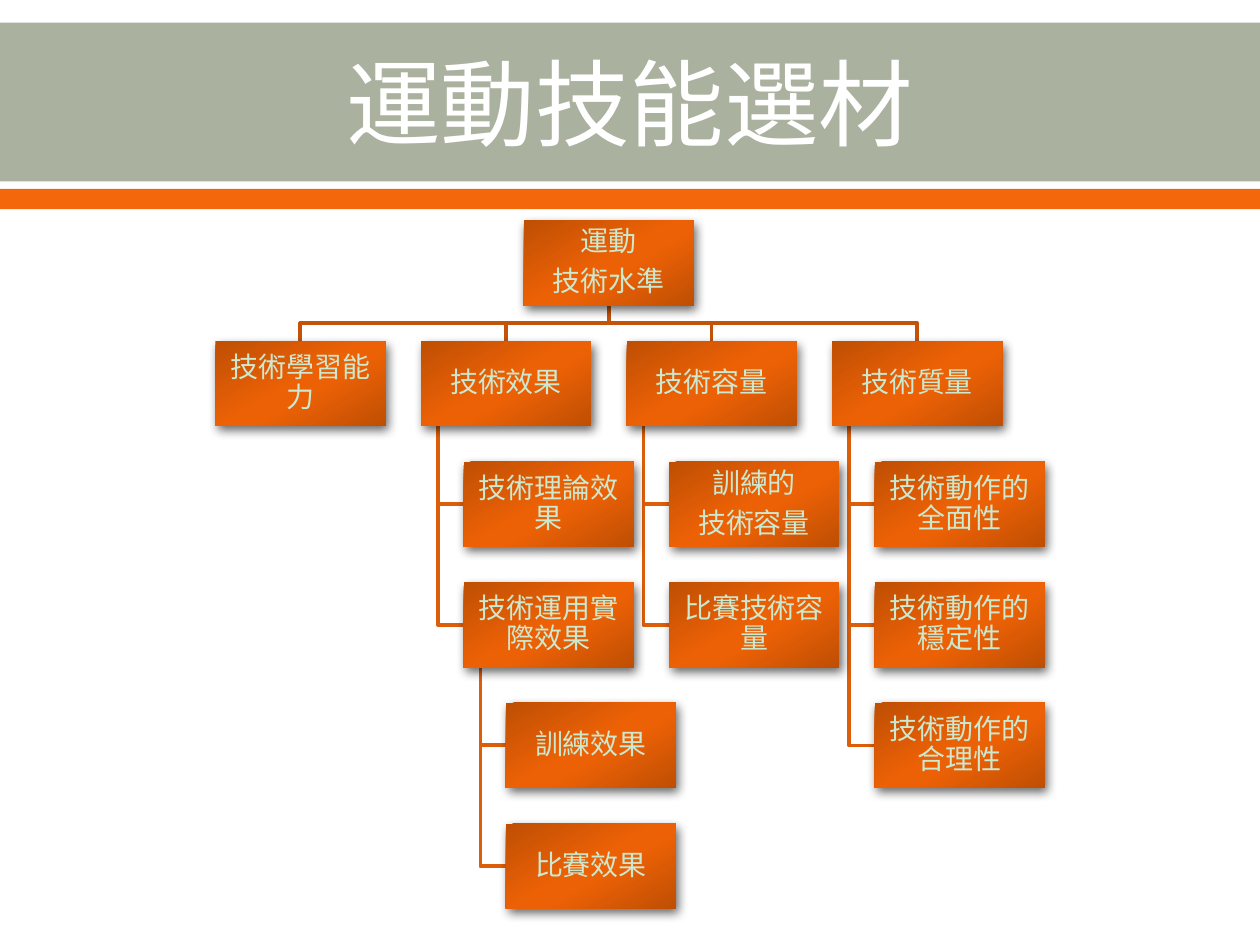
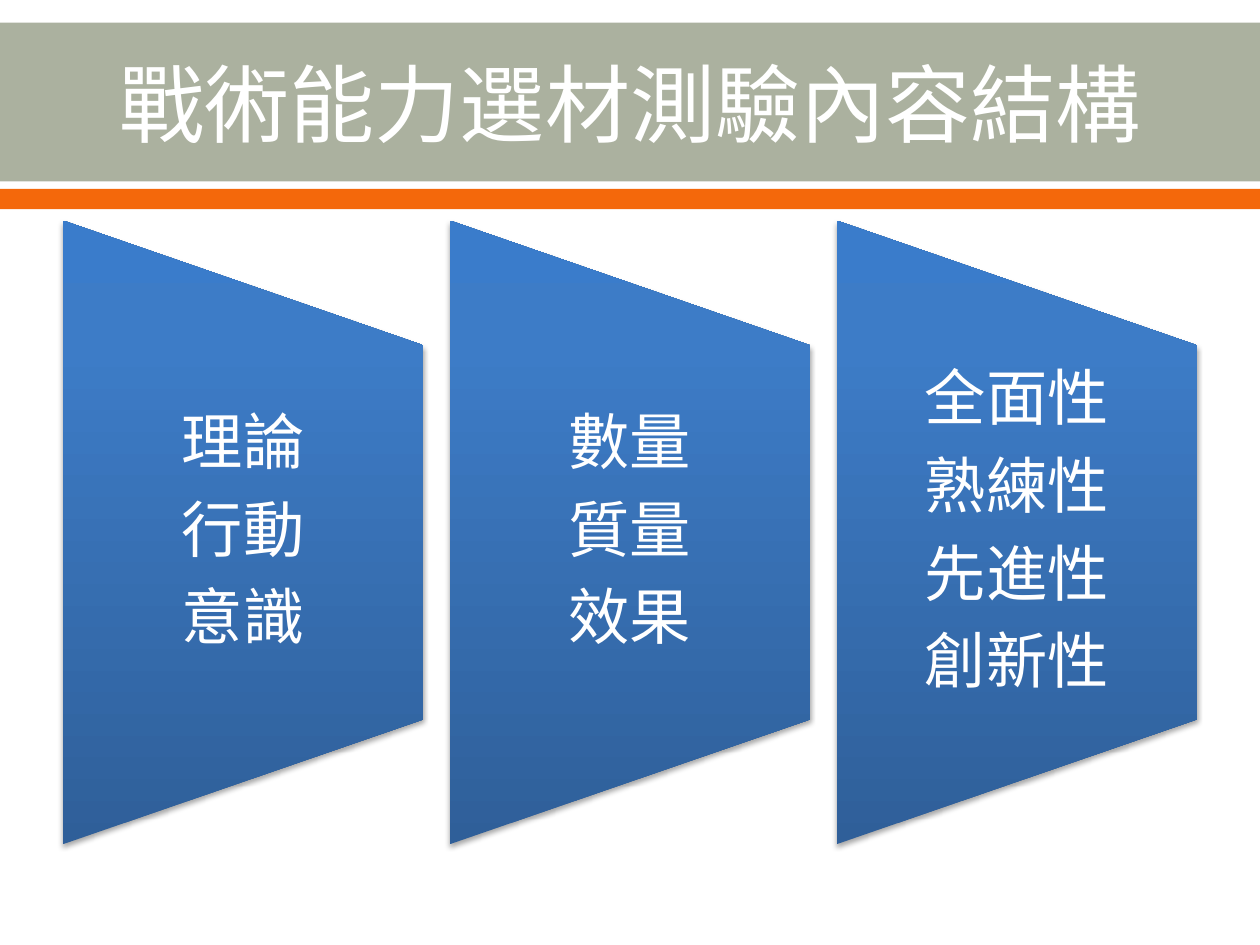
from collections import namedtuple
from dataclasses import dataclass

from pptx import Presentation
from pptx.dml.color import RGBColor
from pptx.enum.shapes import MSO_SHAPE
from pptx.enum.text import MSO_ANCHOR, PP_ALIGN
from pptx.oxml import parse_xml
from pptx.oxml.ns import nsdecls, qn
from pptx.util import Inches, Pt

RECT = MSO_SHAPE.RECTANGLE
PANEL = MSO_SHAPE.FLOWCHART_MANUAL_OPERATION
MIDDLE = MSO_ANCHOR.MIDDLE
CENTER = PP_ALIGN.CENTER

# The grid has 100 columns and 75 rows of one unit each
UNIT = Inches(0.1)
COLS, ROWS = 100, 75

Box = namedtuple("Box", "x y w h")
Shade = namedtuple("Shade", "stops angle")
Cast = namedtuple("Cast", "alpha blur dist angle")


@dataclass(frozen=True)
class Theme:
    font: str = "Calibri"
    white: str = "FFFFFF"
    mint: str = "CCE8CF"
    sage: str = "ABB19F"
    orange: str = "F4680B"
    trunk: str = "C35309"
    twig: str = "DD5E0A"
    node: Shade = Shade(
        ((0, "BF4F04"), (48, "EC6105"), (58, "EC6105"), (100, "BF4F04")), 60)
    panel: Shade = Shade(
        ((0, "2F5F99"), (80, "3D7CC7"), (100, "3A7CCB")), 270)
    node_cast: Cast = Cast(60, 6, 3, 60)
    panel_cast: Cast = Cast(35, 3.1, 1.8, 90)
    small: float = 16
    large: float = 35
    rule: float = 2.22


THEME = Theme()

# Each node holds its lines of text and its child nodes
TREE = (["運動", "技術水準"], [
    (["技術學習能力"], []),
    (["技術效果"], [
        (["技術理論效果"], []),
        (["技術運用實際效果"], [
            (["訓練效果"], []),
            (["比賽效果"], []),
        ]),
    ]),
    (["技術容量"], [
        (["訓練的", "技術容量"], []),
        (["比賽技術容量"], []),
    ]),
    (["技術質量"], [
        (["技術動作的全面性"], []),
        (["技術動作的穩定性"], []),
        (["技術動作的合理性"], []),
    ]),
])

PANELS = [
    ["理論", "行動", "意識"],
    ["數量", "質量", "效果"],
    ["全面性", "熟練性", "先進性", "創新性"],
]


def grid(*lengths):
    """Turn grid units into slide lengths."""
    return [round(n * UNIT) for n in lengths]


def paint(shape, color):
    shape.fill.solid()
    shape.fill.fore_color.rgb = RGBColor.from_string(color)
    shape.line.fill.background()
    shape.shadow.inherit = False


def glow(shape, shade, cast):
    """Give a shape a gradient that stays upright, and a soft shadow."""
    shape.fill.background()
    shape.line.fill.background()
    shape.shadow.inherit = False
    props = shape.fill._xPr
    stops = "".join(
        f'<a:gs pos="{pos * 1000}"><a:srgbClr val="{color}"/></a:gs>'
        for pos, color in shade.stops)
    props.replace(props.find(qn("a:noFill")), parse_xml(
        f'<a:gradFill {nsdecls("a")} rotWithShape="0">'
        f'<a:gsLst>{stops}</a:gsLst>'
        f'<a:lin ang="{shade.angle * 60000}" scaled="0"/></a:gradFill>'))
    props.find(qn("a:effectLst")).append(parse_xml(
        f'<a:outerShdw {nsdecls("a")} blurRad="{Pt(cast.blur)}" '
        f'dist="{Pt(cast.dist)}" dir="{cast.angle * 60000}" '
        f'algn="ctr" rotWithShape="0"><a:srgbClr val="000000">'
        f'<a:alpha val="{cast.alpha * 1000}"/></a:srgbClr></a:outerShdw>'))


def write(shape, lines, size, color, inset, tight=True):
    """Set centred lines; tight ones have close leading and a gap after."""
    frame = shape.text_frame
    frame.word_wrap = True
    frame.vertical_anchor = MIDDLE
    frame.margin_left, frame.margin_top = grid(*inset)
    frame.margin_right, frame.margin_bottom = grid(*inset)
    frame.text = "\n".join(lines)
    for para in frame.paragraphs:
        para.alignment = CENTER
        para.font.name = THEME.font
        para.font.size = Pt(size)
        para.font.color.rgb = RGBColor.from_string(color)
        if tight:
            para.line_spacing = 0.9
            para.space_after = Pt(0.35 * size)


def head(slide, title, size):
    """Draw the bands and the title across the top."""
    for top, high, color in ((1.1, 15.9, THEME.white),
                             (1.8, 12.6, THEME.sage),
                             (15, 1.6, THEME.orange)):
        paint(slide.shapes.add_shape(RECT, *grid(0, top, COLS, high)), color)
    text = slide.shapes.add_textbox(*grid(5, 2, COLS - 10, 12.2))
    write(text, [title], size, THEME.white, (1, 0.5), tight=False)


def link(slide, points, color):
    """Draw an open line with square corners."""
    first, *rest = [grid(*point) for point in points]
    build = slide.shapes.build_freeform(*first)
    build.add_line_segments(rest, close=False)
    line = build.convert_to_shape()
    line.fill.background()
    line.line.color.rgb = RGBColor.from_string(color)
    line.line.width = Pt(THEME.rule)
    line.shadow.inherit = False


def chart(slide, tree, area):
    """Draw a tree: a root, a row of branches, and leaves hung below them."""
    lines, branches = tree
    count = len(branches)
    wide = area.w / (1.21 * (count - 1) + 1.25)
    high = wide / 2
    step = 1.42 * high
    nodes, links = [], []

    def hang(node, x, row):
        """Place a node and its children; return the next free row."""
        y = area.y + row * step
        nodes.append((node[0], x, y))
        row += 1
        for child in node[1]:
            stem = x + wide / 10
            mid = area.y + row * step + high / 2
            links.append(([(stem, y + high), (stem, mid),
                           (x + wide / 4, mid)], THEME.twig))
            row = hang(child, x + wide / 4, row)
        return row

    # Root and branches
    root = area.x + 1.21 * wide * (count - 1) / 2
    nodes.append((lines, root, area.y))
    hub = root + wide / 2
    base, bend = area.y + high, area.y + (high + step) / 2
    for i, branch in enumerate(branches):
        x = area.x + 1.21 * wide * i
        mid = x + wide / 2
        links.append(([(hub, base), (hub, bend), (mid, bend),
                       (mid, area.y + step)], THEME.trunk))
        hang(branch, x, 1)

    # Lines lie behind the boxes
    for points, color in links:
        link(slide, points, color)
    for text, x, y in nodes:
        shape = slide.shapes.add_shape(RECT, *grid(x, y, wide, high))
        glow(shape, THEME.node, THEME.node_cast)
        write(shape, text, THEME.small, THEME.mint, (0.1, 0.1))


def panels(slide, groups, area, gap):
    """Draw equal panels side by side, each tapering to the right."""
    wide = (area.w - gap * (len(groups) - 1)) / len(groups)
    turn = (area.h - wide) / 2
    for i, lines in enumerate(groups):
        x = area.x + i * (wide + gap)
        # The preset tapers downward, so it is laid on its side
        shape = slide.shapes.add_shape(
            PANEL, *grid(x - turn, area.y + turn, area.h, wide))
        shape.rotation = 270
        glow(shape, THEME.panel, THEME.panel_cast)
        text = slide.shapes.add_textbox(*grid(x, area.y, wide, area.h))
        write(text, lines, THEME.large, THEME.white, (2.5, 0))


def main():
    deck = Presentation()
    deck.slide_width, deck.slide_height = grid(COLS, ROWS)
    blank = deck.slide_layouts[6]

    skill = deck.slides.add_slide(blank)
    head(skill, "運動技能選材", 54)
    chart(skill, TREE, Box(17.1, 17.5, 65.8, 54.6))

    tactic = deck.slides.add_slide(blank)
    head(tactic, "戰術能力選材測驗內容結構", 48.6)
    panels(tactic, PANELS, Box(5, 17.5, 90, 49.5), 2.1)

    deck.save("out.pptx")


if __name__ == "__main__":
    main()
